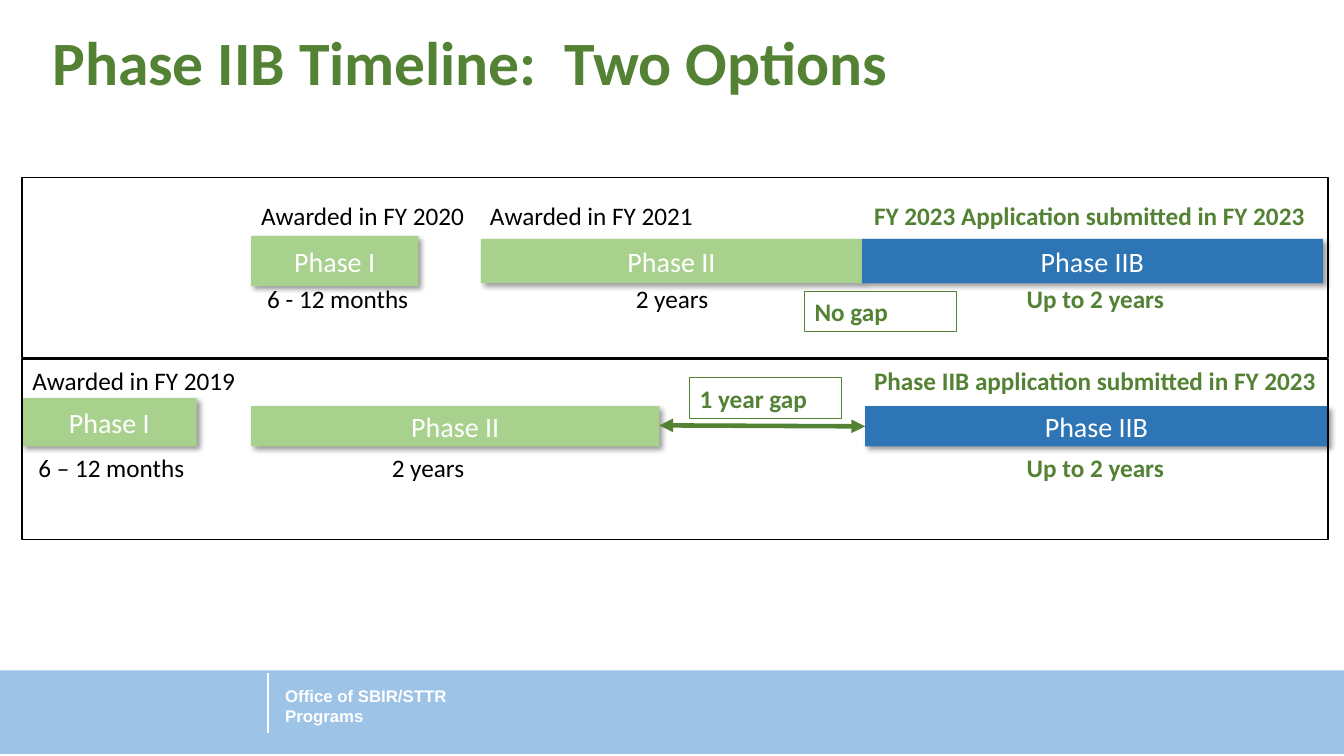
import lxml.etree
import pptx
import pptx.dml.color
import pptx.enum.shapes
import pptx.enum.text
import pptx.oxml.ns
import pptx.util

Inches = pptx.util.Inches
Pt = pptx.util.Pt
Align = pptx.enum.text.PP_ALIGN
Anchor = pptx.enum.text.MSO_ANCHOR

BLACK, WHITE = "000000", "FFFFFF"
DARK_GREEN, LIGHT_GREEN = "548235", "A9D18E"
BLUE, LIGHT_BLUE = "2E75B6", "9DC3E6"

COLUMN_WIDTHS = [2.27, 2.27, 3.81, 4.59]
ROW_HEIGHTS = [0.41, 0.41, 0.41, 0.41, 0.45, 0.41, 0.41]
# row, column, text, highlighted, alignment, left margin
TABLE_TEXTS = [
    (0, 1, "Awarded in FY 2020", False, Align.LEFT, 0.1),
    (0, 2, "Awarded in FY 2021", False, Align.LEFT, 0.1),
    (0, 3, "FY 2023 Application submitted in FY 2023", True, Align.LEFT, 0.1),
    (2, 1, "6 - 12 months", False, Align.LEFT, 0.16),
    (2, 2, "2 years", False, Align.CENTER, 0.1),
    (2, 3, "Up to 2 years", True, Align.CENTER, 0.1),
    (4, 0, "Awarded in FY 2019", False, Align.LEFT, 0.1),
    (4, 3, "Phase IIB application submitted in FY 2023", True, Align.LEFT, 0.1),
    (6, 0, "6 – 12 months", False, Align.LEFT, 0.16),
    (6, 1, "2 years", False, Align.CENTER, 1.34),
    (6, 3, "Up to 2 years", True, Align.CENTER, 0.1),
]
PHASE_BARS = [
    ("Phase I", 2.49, 2.34, 1.66, 0.5, LIGHT_GREEN),
    ("Phase II", 4.77, 2.37, 3.78, 0.44, LIGHT_GREEN),
    ("Phase IIB", 8.55, 2.37, 4.57, 0.44, BLUE),
    ("Phase IIB", 8.58, 4.03, 4.59, 0.4, BLUE),
    ("Phase I", 0.22, 3.95, 1.73, 0.48, LIGHT_GREEN),
    ("Phase II", 2.49, 4.03, 4.05, 0.4, LIGHT_GREEN),
]


def color(hex_text):
    """Return the colour for a hex string."""
    return pptx.dml.color.RGBColor.from_string(hex_text)


def add_element(parent, tag, **attributes):
    """Append a DrawingML element and return it."""
    return lxml.etree.SubElement(parent, pptx.oxml.ns.qn(tag), **attributes)


def write(frame, text, size, hex_text, bold=False, alignment=Align.LEFT, font_name="Calibri"):
    """Put one formatted paragraph in a text frame and return it."""
    paragraph = frame.paragraphs[0]
    paragraph.text = text
    paragraph.alignment = alignment
    font = paragraph.font
    font.name, font.size, font.bold = font_name, Pt(size), bold
    font.color.rgb = color(hex_text)
    return paragraph


def add_text(slide, left, top, width, height, anchor):
    """Add a wrapping text box and return its frame."""
    box = slide.shapes.add_textbox(Inches(left), Inches(top), Inches(width), Inches(height))
    frame = box.text_frame
    frame.word_wrap = True
    frame.vertical_anchor = anchor
    return frame


def add_box(slide, left, top, width, height, fill=None, line=None, line_width=1):
    """Add a rectangle without a shadow."""
    shape = slide.shapes.add_shape(
        pptx.enum.shapes.MSO_SHAPE.RECTANGLE,
        Inches(left), Inches(top), Inches(width), Inches(height))
    shape.shadow.inherit = False
    if fill:
        shape.fill.solid()
        shape.fill.fore_color.rgb = color(fill)
    else:
        shape.fill.background()
    if line:
        shape.line.color.rgb = color(line)
        shape.line.width = Pt(line_width)
    else:
        shape.line.fill.background()
    return shape


def add_phase_bar(slide, text, left, top, width, height, fill):
    """Add a labelled phase bar with a soft shadow."""
    bar = add_box(slide, left, top, width, height, fill)
    effects = bar._element.spPr.find(pptx.oxml.ns.qn("a:effectLst"))
    shadow = add_element(effects, "a:outerShdw", blurRad=str(Pt(4)), dist=str(Pt(3)),
                         dir="2700000", algn="tl", rotWithShape="0")
    shade = add_element(shadow, "a:srgbClr", val=BLACK)
    add_element(shade, "a:alpha", val="40000")
    bar.text_frame.vertical_anchor = Anchor.MIDDLE
    write(bar.text_frame, text, 20, WHITE, alignment=Align.CENTER)


def add_gap_label(slide, text, left, top):
    """Add a framed label that names the gap between phases."""
    label = add_box(slide, left, top, 1.51, 0.4, WHITE, DARK_GREEN, 0.75)
    label.text_frame.word_wrap = True
    label.text_frame.vertical_anchor = Anchor.TOP
    write(label.text_frame, text, 18, DARK_GREEN, True)


def add_line(slide, start, end, hex_text, width, arrows=False):
    """Add a straight line, with arrowheads at both ends if asked."""
    connector = slide.shapes.add_connector(
        pptx.enum.shapes.MSO_CONNECTOR.STRAIGHT, *map(Inches, start + end))
    connector.line.color.rgb = color(hex_text)
    connector.line.width = Pt(width)
    properties = connector._element.spPr
    if arrows:
        outline = properties.find(pptx.oxml.ns.qn("a:ln"))
        for tag in ("a:headEnd", "a:tailEnd"):
            add_element(outline, tag, type="triangle")
    add_element(properties, "a:effectLst")


def add_timeline_table(slide):
    """Add the unfilled table that holds dates and durations."""
    table = slide.shapes.add_table(
        len(ROW_HEIGHTS), len(COLUMN_WIDTHS), Inches(0.22), Inches(1.95),
        Inches(sum(COLUMN_WIDTHS)), Inches(sum(ROW_HEIGHTS))).table
    table.first_row = table.horz_banding = False
    for column, width in zip(table.columns, COLUMN_WIDTHS):
        column.width = Inches(width)
    for row, height in zip(table.rows, ROW_HEIGHTS):
        row.height = Inches(height)
    for cell in table.iter_cells():
        cell.fill.background()
    for row, column, text, highlighted, alignment, margin in TABLE_TEXTS:
        cell = table.cell(row, column)
        cell.margin_left = Inches(margin)
        write(cell.text_frame, text, 18, DARK_GREEN if highlighted else BLACK,
              highlighted, alignment)


def add_footer(slide):
    """Add the footer band with the office name."""
    add_box(slide, 0, 6.65, 13.33, 0.83, LIGHT_BLUE)
    frame = add_text(slide, 2.73, 6.74, 2.11, 0.52, Anchor.MIDDLE)
    write(frame, "Office of SBIR/STTR Programs", 12, WHITE, True, font_name="Arial")
    add_line(slide, (2.66, 6.68), (2.66, 7.27), WHITE, 1)


def main():
    """Build and save the timeline slide."""
    presentation = pptx.Presentation()
    presentation.slide_width = Inches(13.33)
    presentation.slide_height = Inches(7.5)
    slide = presentation.slides.add_slide(presentation.slide_layouts[6])
    add_footer(slide)
    add_timeline_table(slide)
    title = add_text(slide, 0.42, 0.27, 11.5, 1.45, Anchor.TOP)
    write(title, "Phase IIB Timeline:  Two Options", 44, DARK_GREEN, True).line_spacing = 0.9
    for bar in PHASE_BARS:
        add_phase_bar(slide, *bar)
    add_line(slide, (6.54, 4.22), (8.58, 4.23), DARK_GREEN, 3.25, arrows=True)
    add_gap_label(slide, "1 year gap", 6.84, 3.75)
    add_gap_label(slide, "No gap", 7.98, 2.89)
    for top in (1.76, 3.56):
        add_box(slide, 0.22, top, 12.95, 1.79, line=BLACK)
    presentation.save("out.pptx")


if __name__ == "__main__":
    main()
